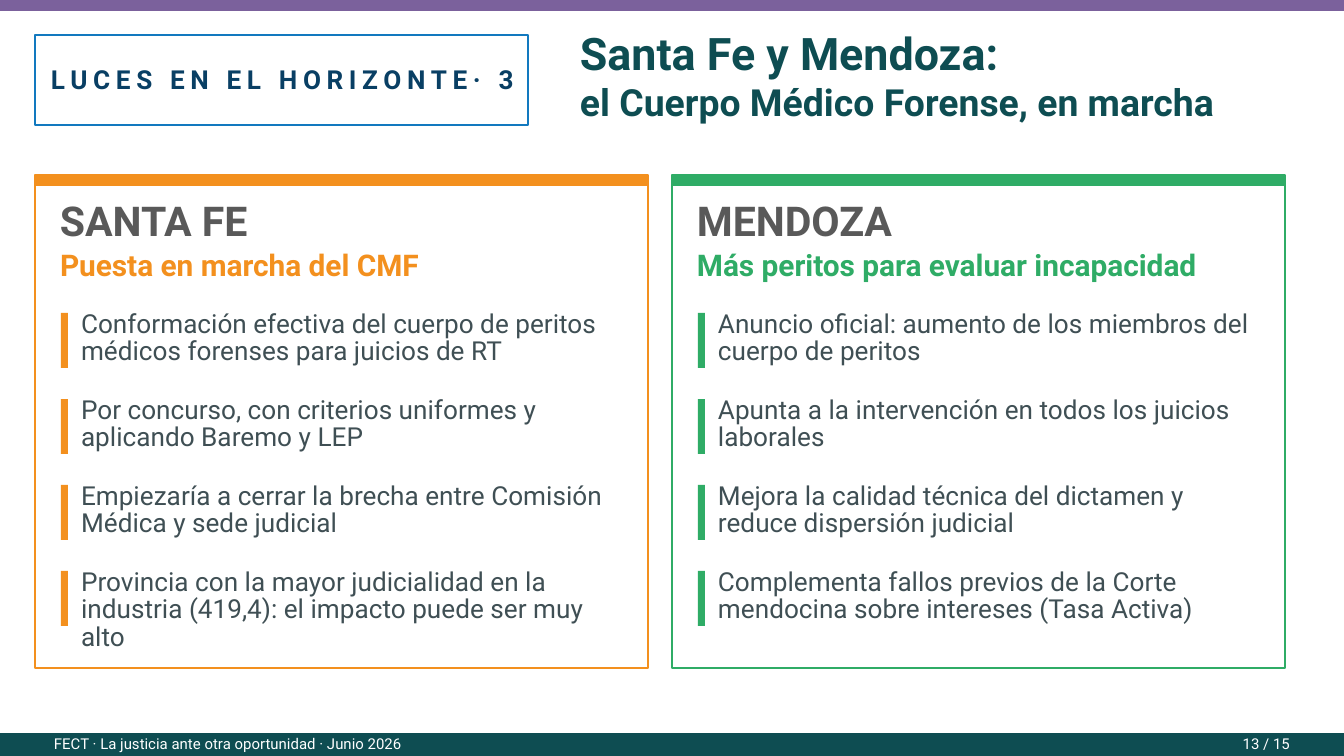
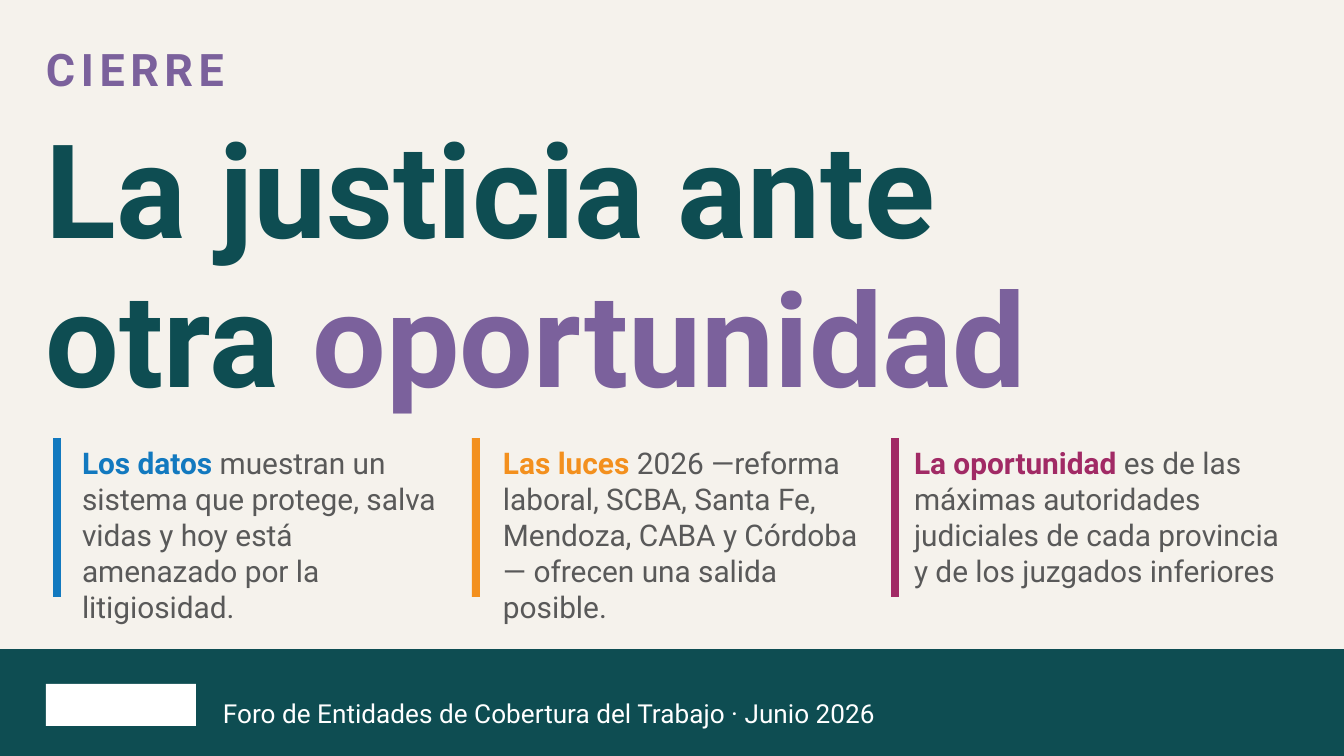
import pptx
import pptx.util
import pptx.dml.color
import pptx.enum.shapes
import pptx.enum.text

EMU_PER_PX = 914400 / 134.4
COLORS = {
    "teal": "0E4D52", "purple": "7B619C", "orange": "F3901E", "green": "2FAC66",
    "blue": "1279BF", "navy": "093F64", "magenta": "A12A65", "gray": "595959",
    "slate": "3F4F54", "cream": "F5F2EC", "white": "FFFFFF",
}
FONT = "Roboto"
LEFT, CENTER, RIGHT = (pptx.enum.text.PP_ALIGN.LEFT, pptx.enum.text.PP_ALIGN.CENTER,
                       pptx.enum.text.PP_ALIGN.RIGHT)
TOP, MIDDLE = pptx.enum.text.MSO_ANCHOR.TOP, pptx.enum.text.MSO_ANCHOR.MIDDLE


def add_box(slide, area, fill=None, line=None):
    box = slide.shapes.add_shape(pptx.enum.shapes.MSO_SHAPE.RECTANGLE,
                                 *[round(v * EMU_PER_PX) for v in area])
    box.shadow.inherit = False
    if fill:
        box.fill.solid()
        box.fill.fore_color.rgb = pptx.dml.color.RGBColor.from_string(COLORS[fill])
    else:
        box.fill.background()
    if line:
        box.line.color.rgb = pptx.dml.color.RGBColor.from_string(COLORS[line])
        box.line.width = pptx.util.Pt(1)
    else:
        box.line.fill.background()


def add_text(slide, area, paragraphs, align=LEFT, anchor=MIDDLE, leading=None, tracking=0):
    frame = slide.shapes.add_textbox(*[round(v * EMU_PER_PX) for v in area]).text_frame
    frame.word_wrap = True
    frame.vertical_anchor = anchor
    frame.margin_left = frame.margin_right = frame.margin_top = frame.margin_bottom = 0
    for index, runs in enumerate(paragraphs):
        paragraph = frame.paragraphs[0] if index == 0 else frame.add_paragraph()
        paragraph.alignment = align
        if leading:
            paragraph.line_spacing = leading
        for words, size, color, bold in runs:
            run = paragraph.add_run()
            run.text = words
            run.font.name = FONT
            run.font.size = pptx.util.Pt(size)
            run.font.bold = bold
            run.font.color.rgb = pptx.dml.color.RGBColor.from_string(COLORS[color])
            if tracking:
                run.font._element.set("spc", str(tracking * 100))


deck = pptx.Presentation()
deck.slide_width = round(1344 * EMU_PER_PX)
deck.slide_height = round(756 * EMU_PER_PX)
blank = deck.slide_layouts[6]

provinces = deck.slides.add_slide(blank)
add_box(provinces, (0, 0, 1344, 11), "purple")
add_box(provinces, (0, 734, 1344, 22), "teal", "teal")
add_text(provinces, (54, 732, 806, 24),
         [[("FECT · La justicia ante otra oportunidad · Junio 2026", 8, "white", False)]])
add_text(provinces, (1156, 732, 134, 24), [[("13 / 15", 8, "white", False)]], RIGHT)
add_box(provinces, (35, 35, 493, 90), line="blue")
add_text(provinces, (0, 55, 565, 48), [[("LUCES EN EL HORIZONTE· 3", 14, "navy", True)]],
         CENTER, tracking=3)
add_text(provinces, (580, 45, 750, 60), [
    [("Santa Fe y Mendoza:", 24, "teal", True)],
    [("el Cuerpo Médico Forense, en marcha", 20, "teal", True)],
])

province_cards = [
    ("SANTA FE", "Puesta en marcha del CMF", "orange", [
        "Conformación efectiva del cuerpo de peritos médicos forenses para juicios de RT",
        "Por concurso, con criterios uniformes y aplicando Baremo y LEP",
        "Empiezaría a cerrar la brecha entre Comisión Médica y sede judicial",
        "Provincia con la mayor judicialidad en la industria (419,4): "
        "el impacto puede ser muy alto",
    ]),
    ("MENDOZA", "Más peritos para evaluar incapacidad", "green", [
        "Anuncio oficial: aumento de los miembros del cuerpo de peritos",
        "Apunta a la intervención en todos los juicios laborales",
        "Mejora la calidad técnica del dictamen y reduce dispersión judicial",
        "Complementa fallos previos de la Corte mendocina sobre intereses (Tasa Activa)",
    ]),
]
for column, (province, summary, accent, points) in enumerate(province_cards):
    x = 35 + 637 * column
    add_box(provinces, (x, 175, 613, 11), accent)
    add_box(provinces, (x, 175, 613, 493), line=accent)
    add_text(provinces, (x + 25, 195, 550, 63), [[(province, 22, "gray", True)]], anchor=TOP)
    add_text(provinces, (x + 25, 241, 580, 47), [[(summary, 16, accent, True)]])
    for row, point in enumerate(points):
        y = 311 + 86 * row
        add_box(provinces, (x + 26, y + 2, 7, 55), accent)
        add_text(provinces, (x + 46, y, 544, 60), [[(point, 14, "slate", False)]],
                 anchor=TOP, leading=pptx.util.Pt(14.8))

closing = deck.slides.add_slide(blank)
add_box(closing, (0, 0, 1344, 756), "cream")
add_text(closing, (46, 42, 638, 54), [[("CIERRE", 24, "purple", True)]], tracking=3)
add_text(closing, (46, 107, 1142, 323), [
    [("La justicia ante", 70, "teal", True)],
    [("otra ", 70, "teal", True), ("oportunidad", 70, "purple", True)],
], leading=0.95)

messages = [
    ("Los datos ", "muestran un sistema que protege, salva vidas y hoy está "
     "amenazado por la litigiosidad.", "blue", 82, 359),
    ("Las luces ", "2026 —reforma laboral, SCBA, Santa Fe, Mendoza, CABA y Córdoba— "
     "ofrecen una salida posible.", "orange", 503, 359),
    ("La oportunidad ", "es de las máximas autoridades judiciales de cada provincia "
     "y de los juzgados inferiores", "magenta", 914, 370),
]
for column, (lead, message, accent, x, width) in enumerate(messages):
    add_box(closing, (53 + 419 * column, 438, 8, 159), accent)
    add_text(closing, (x, 445, width, 142),
             [[(lead, 16, accent, True), (message, 16, "gray", False)]], anchor=TOP)

add_box(closing, (0, 650, 1344, 106), "teal", "teal")
add_box(closing, (46, 684, 150, 42), "white")
add_text(closing, (223, 693, 1075, 40),
         [[("Foro de Entidades de Cobertura del Trabajo · Junio 2026", 14, "white", False)]])

deck.save("out.pptx")
